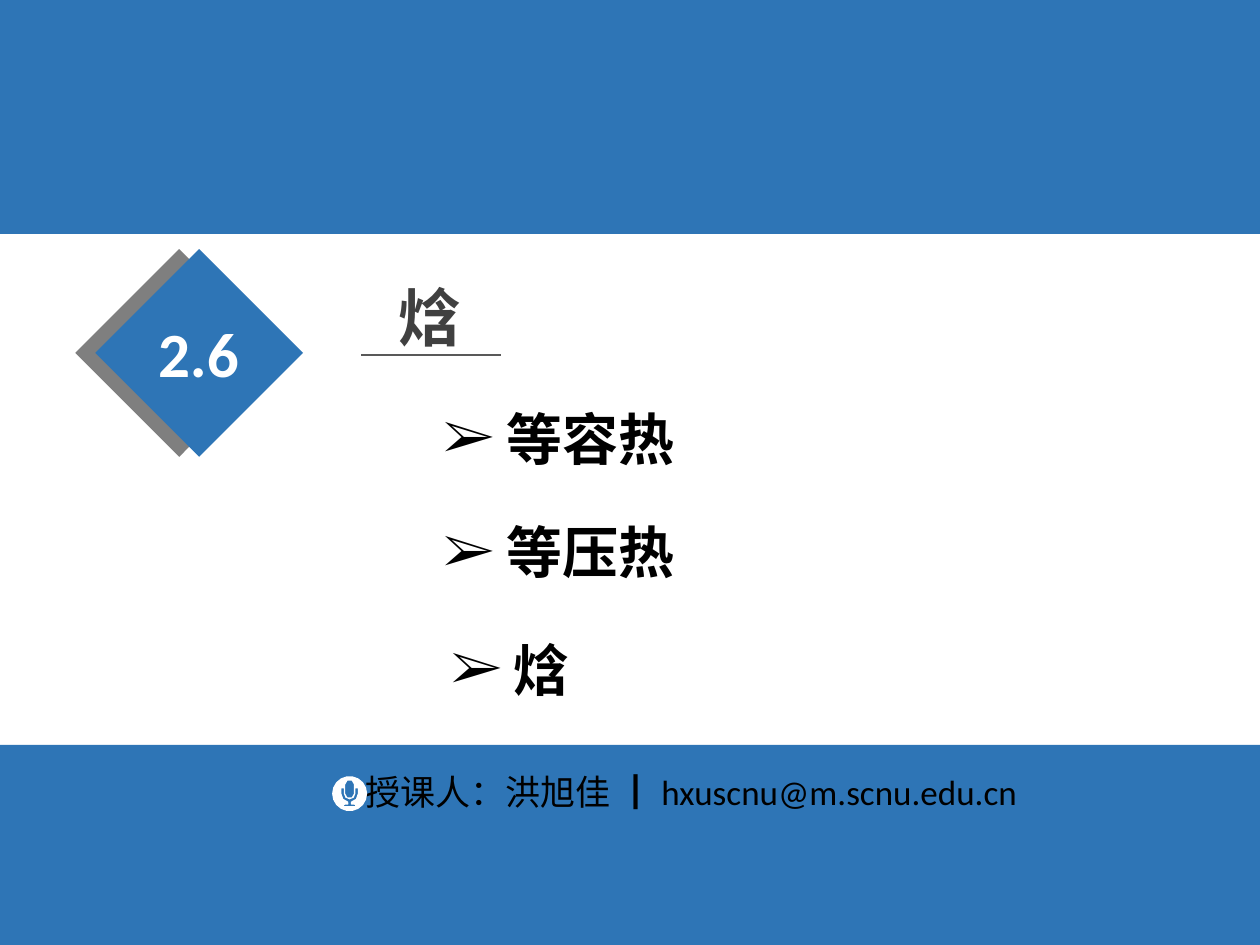
from dataclasses import dataclass
from math import cos, radians, sin

from lxml.etree import SubElement
from pptx import Presentation
from pptx.dml.color import RGBColor
from pptx.enum.shapes import MSO_CONNECTOR, MSO_SHAPE
from pptx.enum.text import MSO_ANCHOR, MSO_AUTO_SIZE, PP_ALIGN
from pptx.oxml.ns import qn
from pptx.util import Pt


@dataclass(frozen=True)
class Theme:
    blue: str = "2E75B6"
    gray: str = "7F7F7F"
    rule: str = "595959"
    heading: str = "404040"
    black: str = "000000"
    white: str = "FFFFFF"
    cjk: str = "Noto Sans CJK SC"
    latin: str = "Calibri"
    serif: str = "Times New Roman"
    heading_size: int = 36
    topic_size: int = 32
    footer_size: int = 20


THEME = Theme()
WIDTH, HEIGHT = 720, 540

# Content: text, then the box in points (left, top, width, height)
TITLE, TITLE_BOX = "焓", (220.7, 142.6, 51, 56)
NUMBER, NUMBER_BOX = "2.6", (82.8, 163.4, 61.2, 59)
TOPICS = [
    ("等容热", (246.2, 231.1, 148.3, 38.9)),
    ("等压热", (246.2, 295.9, 148.3, 38.9)),
    ("焓", (250.6, 362.9, 83.5, 38.9)),
]
FOOTER = [("授课人：洪旭佳 ┃ ", THEME.cjk), ("hxuscnu@m.scnu.edu.cn", THEME.latin)]
FOOTER_BOX = (201.6, 437, 432, 31.7)
BANDS = [(0, 0, WIDTH, 133.7), (0, 425.7, WIDTH, HEIGHT - 425.7)]
DIAMOND_SIDE, DIAMOND_TOP = 84, 159.7
DIAMONDS = [(60.4, THEME.gray), (71.8, THEME.blue)]
RULE = (206.5, 202.8, 286.3, 202.8)
ICON_CENTER = (199.8, 453.5)


def color(value):
    return RGBColor.from_string(value)


def style_font(font, name, size, value, bold=False):
    font.name, font.size, font.bold = name, Pt(size), bold
    font.color.rgb = color(value)


def place(shape, box):
    shape.left, shape.top, shape.width, shape.height = map(Pt, box)


def paint(shape, value):
    shape.shadow.inherit = False
    shape.fill.solid()
    shape.fill.fore_color.rgb = color(value)
    shape.line.fill.background()


def add_rectangle(slide, box, value):
    shape = slide.shapes.add_shape(MSO_SHAPE.RECTANGLE, *map(Pt, box))
    paint(shape, value)
    return shape


def set_text(shape, text, wrap=False, align=PP_ALIGN.LEFT):
    frame = shape.text_frame
    frame.word_wrap = wrap
    frame.auto_size = MSO_AUTO_SIZE.SHAPE_TO_FIT_TEXT
    frame.vertical_anchor = MSO_ANCHOR.TOP
    paragraph = frame.paragraphs[0]
    paragraph.text = text
    paragraph.alignment = align
    return paragraph


def add_text(slide, box, text, **options):
    shape = slide.shapes.add_textbox(*map(Pt, box))
    return shape, set_text(shape, text, **options)


def add_bullet(paragraph, character):
    properties = paragraph._p.get_or_add_pPr()
    properties.set("marL", str(Pt(36)))
    properties.set("indent", str(-Pt(36)))
    SubElement(properties, qn("a:buFont")).set("typeface", THEME.serif)
    SubElement(properties, qn("a:buChar")).set("char", character)


def arc(center_y, radius, start, end, step):
    """Points around the icon axis; angles run clockwise from the right."""
    direction = step if end > start else -step
    return [(radius * cos(radians(angle)), center_y + radius * sin(radians(angle)))
            for angle in range(start, end + direction, direction)]


def add_microphone(slide):
    disc = arc(0, 10, 0, 340, 20)
    capsule = arc(-5.2, 2.5, 360, 180, 60) + arc(0, 2.5, 180, 0, 60)
    stand = [(0.7, 6.2), (3.2, 6.4), (3.2, 7.2), (-3.2, 7.2), (-3.2, 6.4), (-0.7, 6.2)]
    cup = ([(4.7, -3)] + arc(0, 4.7, 0, 80, 40) + stand + arc(0, 4.7, 100, 180, 40)
           + [(-4.7, -3), (-3.3, -3)] + arc(0, 3.3, 180, 0, 45) + [(3.3, -3)])
    center_x, center_y = ICON_CENTER
    contours = [[(Pt(center_x + x), Pt(center_y + y)) for x, y in contour]
                for contour in (disc, capsule[::-1], cup[::-1])]
    builder = slide.shapes.build_freeform(*contours[0][0])
    builder.add_line_segments(contours[0][1:])
    for contour in contours[1:]:
        builder.move_to(*contour[0])
        builder.add_line_segments(contour[1:])
    paint(builder.convert_to_shape(), THEME.white)


def main():
    presentation = Presentation()
    presentation.slide_width, presentation.slide_height = Pt(WIDTH), Pt(HEIGHT)
    slide = presentation.slides.add_slide(presentation.slide_layouts[5])

    # Title and its rule
    title = slide.shapes.title
    place(title, TITLE_BOX)
    paragraph = set_text(title, TITLE)
    paragraph.line_spacing = 1.3
    style_font(paragraph.font, THEME.cjk, THEME.heading_size, THEME.heading, True)
    rule = slide.shapes.add_connector(MSO_CONNECTOR.STRAIGHT, *map(Pt, RULE))
    rule.line.color.rgb = color(THEME.rule)
    rule.line.width = Pt(1.5)
    SubElement(rule._element.spPr, qn("a:effectLst"))

    # Section number on two overlapping diamonds
    for left, value in DIAMONDS:
        box = (left, DIAMOND_TOP, DIAMOND_SIDE, DIAMOND_SIDE)
        add_rectangle(slide, box, value).rotation = 45
    _, paragraph = add_text(slide, NUMBER_BOX, NUMBER, align=PP_ALIGN.CENTER)
    paragraph.line_spacing = 1.3
    style_font(paragraph.font, THEME.latin, THEME.heading_size, THEME.white, True)

    # Top and bottom bands
    for box in BANDS:
        add_rectangle(slide, box, THEME.blue)

    # Topics
    for text, box in TOPICS:
        shape, paragraph = add_text(slide, box, text)
        shape.text_frame.margin_top = shape.text_frame.margin_bottom = 0
        add_bullet(paragraph, "➢")
        style_font(paragraph.font, THEME.serif, THEME.topic_size, THEME.black, True)

    # Lecturer line
    _, paragraph = add_text(slide, FOOTER_BOX, "", wrap=True)
    for text, font_name in FOOTER:
        run = paragraph.add_run()
        run.text = text
        style_font(run.font, font_name, THEME.footer_size, THEME.black)
    add_microphone(slide)

    presentation.save("out.pptx")


if __name__ == "__main__":
    main()
